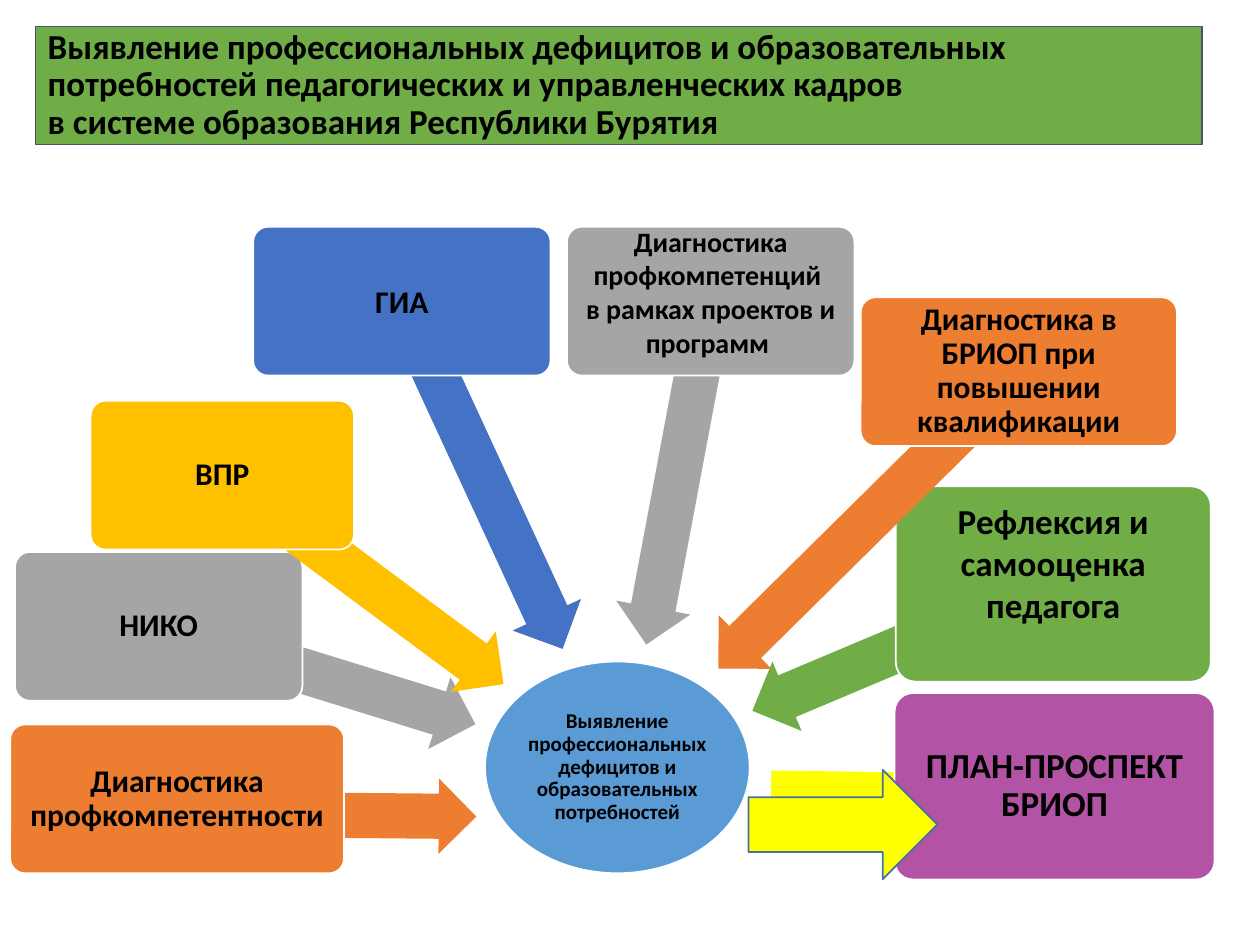
import math
from dataclasses import dataclass
from typing import Optional

import pptx
import pptx.dml.color
import pptx.enum.shapes
import pptx.enum.text
import pptx.util

Pt = pptx.util.Pt
Kind = pptx.enum.shapes.MSO_SHAPE
Align = pptx.enum.text.PP_ALIGN

WHITE, BLACK, GREEN = "FFFFFF", "000000", "70AD47"
ORANGE, GREY, YELLOW = "ED7D31", "A5A5A5", "FFFF00"
THICK = 43  # height of a slanted arrow


@dataclass
class Node:
    """A rounded box and the arrow that starts behind it."""
    text: list[str]
    fill: str
    left: float
    top: float
    width: float
    tip: tuple[float, float]
    height: float = 85
    tail: Optional[tuple[float, float]] = None  # box centre if not given
    size: float = 18
    space: float = 0.9
    lift: float = 0  # extra room under the text
    dart: Optional[str] = None  # arrow colour, box fill if not given


NODES = [
    Node(["Диагностика профкомпетентности"], ORANGE, 5.8, 414, 190.8,
         (272.2, 466.6), tail=(105.8, 465.1)),
    Node(["НИКО"], GREY, 8.6, 315.4, 164.2, (271.6, 413.8)),
    Node(["ВПР"], "FFC000", 51.8, 229, 150.5, (287.7, 390.9)),
    Node(["ГИА"], "4472C4", 144.7, 129.6, 169.9, (321.5, 370.8), space=1),
    Node(["Рефлексия и самооценка педагога"], GREEN, 511.9, 277.9, 180,
         (429.9, 406.2), height=111.6, size=20, space=1, lift=24.4),
    Node(["Диагностика в БРИОП при повышении квалификации"], ORANGE,
         491.8, 169.9, 180.7, (410.5, 382)),
    Node(["Диагностика профкомпетенций ", "в рамках проектов и программ "],
         GREY, 324, 129.6, 164.2, (369.3, 368.3), size=16, space=1, lift=11),
    Node(["ПЛАН-ПРОСПЕКТ БРИОП"], "B353A5", 511.2, 396, 182.9,
         (605.5, 455.5), height=106.6, tail=(440.6, 453.2), size=20,
         dart=YELLOW),
]


def tint(code: str) -> pptx.dml.color.RGBColor:
    return pptx.dml.color.RGBColor.from_string(code)


def draw(slide, kind, left: float, top: float, width: float, height: float,
         fill: str, line: Optional[str] = None, weight: float = 1):
    shape = slide.shapes.add_shape(
        kind, Pt(left), Pt(top), Pt(width), Pt(height))
    shape.shadow.inherit = False
    shape.fill.solid()
    shape.fill.fore_color.rgb = tint(fill)
    if line:
        shape.line.color.rgb = tint(line)
        shape.line.width = Pt(weight)
    else:
        shape.line.fill.background()
    return shape


def write(shape, paras: list[str], size: float, space: float = 0.9,
          align=Align.CENTER, pad: tuple[float, float] = (2.7, 2.7),
          lift: float = 0) -> None:
    frame = shape.text_frame
    frame.word_wrap = True
    frame.vertical_anchor = pptx.enum.text.MSO_ANCHOR.MIDDLE
    frame.margin_left = frame.margin_right = Pt(pad[0])
    frame.margin_top = Pt(pad[1])
    frame.margin_bottom = Pt(pad[1] + lift)
    for i, text in enumerate(paras):
        para = frame.add_paragraph() if i else frame.paragraphs[0]
        para.alignment = align
        para.line_spacing = space
        for j, part in enumerate(text.split("\n")):
            if j:
                para.add_line_break()
            run = para.add_run()
            run.text = part
            run.font.name = "Calibri"
            run.font.size = Pt(size)
            run.font.bold = True
            run.font.color.rgb = tint(BLACK)


def point(slide, tail: tuple[float, float], tip: tuple[float, float],
          fill: str) -> None:
    """Lay a block arrow from tail to tip."""
    span = math.dist(tail, tip)
    mid_x, mid_y = (tail[0] + tip[0]) / 2, (tail[1] + tip[1]) / 2
    arrow = draw(slide, Kind.LEFT_ARROW, mid_x - span / 2,
                 mid_y - THICK / 2, span, THICK, fill)
    arrow.adjustments[0] = 0.6
    arrow.adjustments[1] = 0.5
    turn = math.atan2(tail[1] - tip[1], tail[0] - tip[0])
    arrow.rotation = math.degrees(turn) % 360


def place(slide, node: Node) -> None:
    mid = (node.left + node.width / 2, node.top + node.height / 2)
    point(slide, node.tail or mid, node.tip, node.dart or node.fill)
    box = draw(slide, Kind.ROUNDED_RECTANGLE, node.left, node.top,
               node.width, node.height, node.fill, WHITE)
    box.adjustments[0] = 0.1
    write(box, node.text, node.size, node.space, lift=node.lift)


def main() -> None:
    deck = pptx.Presentation()
    deck.slide_width, deck.slide_height = Pt(720), Pt(540)
    slide = deck.slides.add_slide(deck.slide_layouts[6])

    # Title bar
    title = draw(slide, Kind.RECTANGLE, 20.2, 15.1, 666.7, 67.7,
                 GREEN, "44546A", 0.75)
    write(title, ["Выявление профессиональных дефицитов и образовательных "
                  "потребностей педагогических и управленческих кадров\n"
                  "в системе образования Республики Бурятия"],
          20, align=Align.LEFT, pad=(7.2, 3.6))

    # Central goal
    goal = draw(slide, Kind.OVAL, 277.2, 378, 151.2, 121, "5B9BD5", WHITE)
    write(goal, ["Выявление профессиональных дефицитов и образовательных "
                 "потребностей"], 12, pad=(0.6, 0.6))

    # Sources around it, and the resulting plan
    for node in NODES:
        place(slide, node)

    # Outlined arrow to the plan
    draw(slide, Kind.RIGHT_ARROW, 427.7, 439.9, 108, 62.6, YELLOW, "43739E")

    deck.save("out.pptx")


if __name__ == "__main__":
    main()
